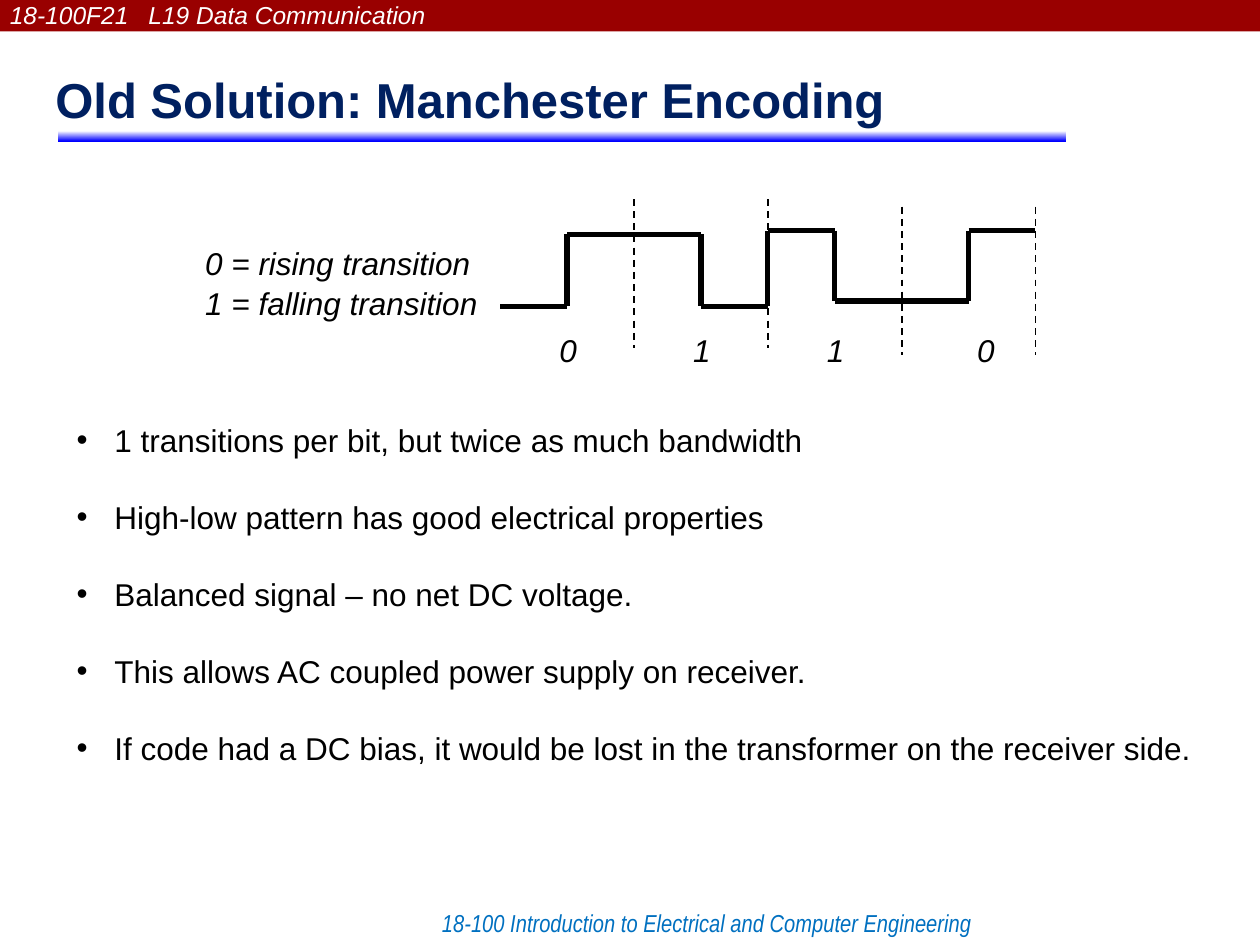
from dataclasses import dataclass
from itertools import pairwise

from lxml.etree import SubElement
from pptx import Presentation
from pptx.dml.color import RGBColor
from pptx.enum.dml import MSO_LINE
from pptx.enum.shapes import MSO_CONNECTOR, MSO_SHAPE
from pptx.enum.text import MSO_ANCHOR, MSO_AUTO_SIZE, PP_ALIGN
from pptx.oxml.ns import qn
from pptx.util import Inches, Pt


@dataclass(frozen=True)
class Theme:
    """Colours, fonts and type sizes of the lecture slide."""
    banner: str = "990000"
    white: str = "FFFFFF"
    ink: str = "000000"
    title: str = "002060"
    footer: str = "0070C0"
    rule: str = "0000FF"
    font: str = "Arial"
    narrow_font: str = "Arial Narrow"
    title_size: int = 28
    body_size: int = 18
    small_size: int = 14


class LectureSlide:
    """Draws elements on a slide grid of 100 columns by 75 rows."""

    def __init__(self, presentation, theme):
        """Add a title-only slide and work out the grid cell."""
        self.theme = theme
        self.slide = presentation.slides.add_slide(presentation.slide_layouts[5])
        self.column = presentation.slide_width / 100
        self.row = presentation.slide_height / 75

    def area(self, left, top, width, height):
        """Turn grid columns and rows into slide lengths."""
        return (round(left * self.column), round(top * self.row),
                round(width * self.column), round(height * self.row))

    def styled_run(self, paragraph, text, size, color, bold=False, italic=False, font=None):
        """Add one formatted run to a paragraph."""
        run = paragraph.add_run()
        run.text = text
        run.font.name = font or self.theme.font
        run.font.size = Pt(size)
        run.font.bold = bold
        run.font.italic = italic
        run.font.color.rgb = RGBColor.from_string(color)

    def title(self, text, *box):
        """Move and format the title placeholder."""
        shape = self.slide.shapes.title
        shape.left, shape.top, shape.width, shape.height = self.area(*box)
        frame = shape.text_frame
        frame.auto_size = MSO_AUTO_SIZE.NONE
        frame.vertical_anchor = MSO_ANCHOR.TOP
        frame.margin_top = Inches(0.09)
        paragraph = frame.paragraphs[0]
        paragraph.alignment = PP_ALIGN.LEFT
        self.styled_run(paragraph, text, self.theme.title_size, self.theme.title, bold=True)

    def bar(self, box, *colors):
        """Draw a borderless bar in one colour or a top-to-bottom gradient."""
        shape = self.slide.shapes.add_shape(MSO_SHAPE.RECTANGLE, *self.area(*box))
        shape.shadow.inherit = False
        shape.line.fill.background()
        if len(colors) == 1:
            shape.fill.solid()
            shape.fill.fore_color.rgb = RGBColor.from_string(colors[0])
            return
        shape.fill.gradient()
        shape.fill.gradient_angle = 270
        for stop, color in zip(shape.fill.gradient_stops, colors):
            stop.color.rgb = RGBColor.from_string(color)

    def text(self, box, lines, size, color, wrap=False, before=0, after=0, **style):
        """Add a text box with one paragraph per line and return the paragraphs."""
        frame = self.slide.shapes.add_textbox(*self.area(*box)).text_frame
        frame.word_wrap = wrap
        paragraphs = []
        for index, line in enumerate(lines):
            paragraph = frame.add_paragraph() if index else frame.paragraphs[0]
            paragraph.space_before = Pt(before)
            paragraph.space_after = Pt(after)
            self.styled_run(paragraph, line, size, color, **style)
            paragraphs.append(paragraph)
        return paragraphs

    def header(self, box, text, tab):
        """Add the banner text with a tab stop after the course code."""
        paragraph, = self.text(box, [text], self.theme.small_size, self.theme.white,
                               wrap=True, italic=True)
        stops = SubElement(paragraph._p.get_or_add_pPr(), qn("a:tabLst"))
        SubElement(stops, qn("a:tab"), pos=str(round(tab * self.column)), algn="l")

    def bullets(self, box, lines, indent):
        """Add a bulleted list with a hanging indent."""
        hanging = round(indent * self.column)
        for paragraph in self.text(box, lines, self.theme.body_size, self.theme.ink,
                                   wrap=True, before=1, after=21.4):
            properties = paragraph._p.get_or_add_pPr()
            properties.set("marL", str(hanging))
            properties.set("indent", str(-hanging))
            SubElement(properties, qn("a:buFont"), typeface=self.theme.font)
            SubElement(properties, qn("a:buChar"), char="•")

    def line(self, start, end, width, dash=None):
        """Draw a straight line between two grid points."""
        connector = self.slide.shapes.add_connector(
            MSO_CONNECTOR.STRAIGHT, *self.area(*start, *end))
        connector.line.color.rgb = RGBColor.from_string(self.theme.ink)
        connector.line.width = Pt(width)
        connector.line.dash_style = dash
        SubElement(connector._element.spPr, qn("a:effectLst"))

    def waveform(self, left, half_bit, levels):
        """Draw the signal from one level per half bit."""
        for index, level in enumerate(levels):
            start = left + index * half_bit
            self.line((start, level), (start + half_bit, level), 3)
        for index, (level, following) in enumerate(pairwise(levels), 1):
            if level != following:
                edge = left + index * half_bit
                self.line((edge, level), (edge, following), 3)


def main():
    """Build the Manchester encoding slide."""
    theme = Theme()
    presentation = Presentation()
    presentation.slide_width, presentation.slide_height = Inches(10), Inches(7.5)
    page = LectureSlide(presentation, theme)

    page.bar((0, 0, 100, 2.5), theme.banner)
    page.text((34.1, 71.6, 44.4, 3.4),
              ["18-100 Introduction to Electrical and Computer Engineering"],
              theme.small_size, theme.footer, italic=True, font=theme.narrow_font)
    page.header((-0.2, -0.5, 74.7, 3.3), "18-100F21\tL19 Data Communication", 11)
    page.title("Old Solution: Manchester Encoding", 3.4, 4.6, 90.1, 7.6)

    left, half_bit = 39.7, 5.31
    high, low, later_high, later_low = 18.6, 24.3, 18.3, 23.9
    page.waveform(left, half_bit, [low, high, high, low,
                                   later_high, later_low, later_low, later_high])
    bits = [("0", 15.8, 0), ("1", 15.8, 0), ("1", 16.4, 0), ("0", 16.4, 1.3)]
    for index, (bit, top, shift) in enumerate(bits):
        boundary = left + 2 * (index + 1) * half_bit
        page.line((boundary, top), (boundary, top + 11.8), 1, MSO_LINE.DASH)
        page.text((boundary - half_bit - 1.6 + shift, 25.8, 3.4, 4), [bit],
                  theme.body_size, theme.ink, before=1, italic=True)

    page.text((15.3, 18.9, 23.8, 7.1),
              ["0 = rising transition", "1 = falling transition"],
              theme.body_size, theme.ink, before=1, italic=True)
    page.bullets((5.1, 32.9, 91.7, 28.3), [
        "1 transitions per bit, but twice as much bandwidth",
        "High-low pattern has good electrical properties",
        "Balanced signal – no net DC voltage.",
        "This allows AC coupled power supply on receiver.",
        "If code had a DC bias, it would be lost in the transformer on the receiver side.",
    ], 3)
    page.bar((4.6, 10.4, 80, 0.8), theme.white, theme.rule)

    presentation.save("out.pptx")


if __name__ == "__main__":
    main()
